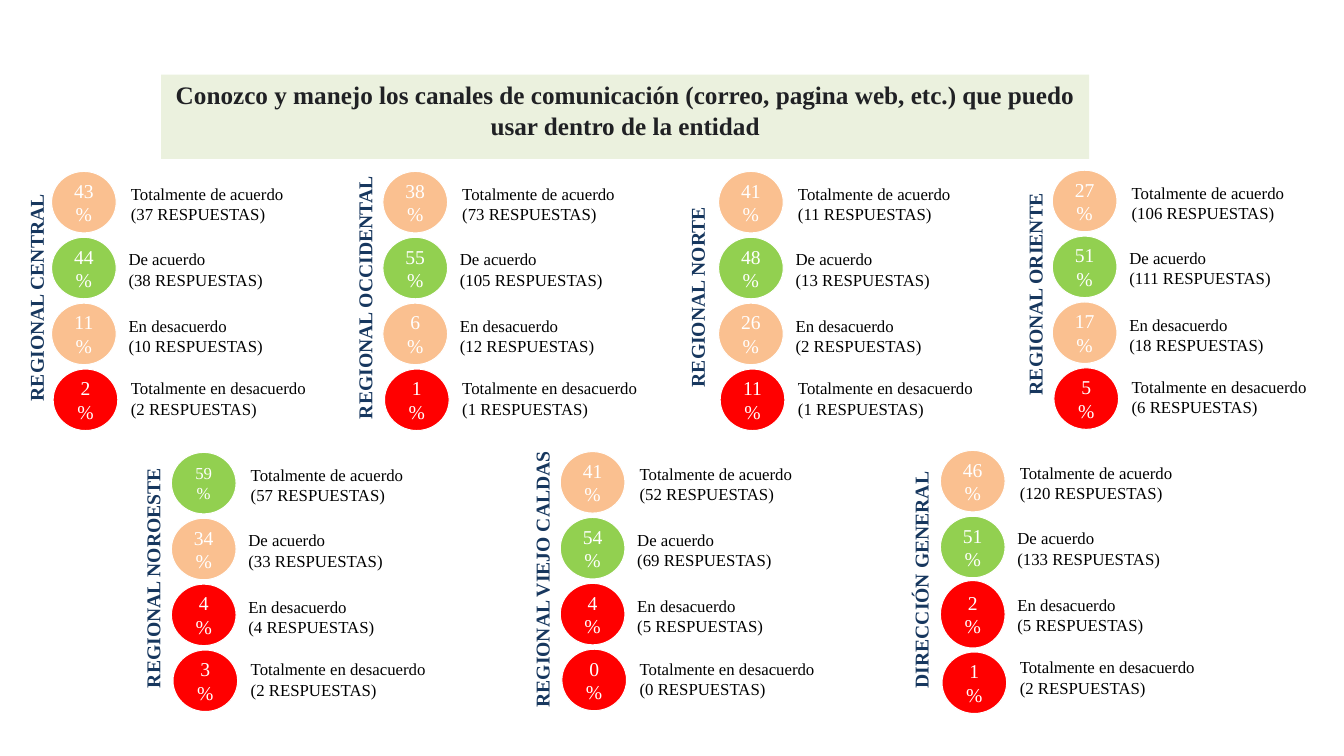
"""Build a slide of survey answers by region."""
from pptx import Presentation
from pptx import util as u
from pptx.dml.color import RGBColor
from pptx.enum import shapes, text

FONT = "Times New Roman"
WHITE = RGBColor(0xFF, 0xFF, 0xFF)
BLACK = RGBColor(0x00, 0x00, 0x00)
PEACH = RGBColor(0xFA, 0xC0, 0x90)
GREEN = RGBColor(0x92, 0xD0, 0x50)
RED = RGBColor(0xFF, 0x00, 0x00)
NAVY = RGBColor(0x17, 0x37, 0x5E)
PALE = RGBColor(0xEB, 0xF1, 0xDE)
INK = RGBColor(0x20, 0x21, 0x24)

TITLE = ("Conozco y manejo los canales de comunicación (correo, pagina web, etc.) "
         "que puedo usar dentro de la entidad")
STEP = 1.66
# Each scale row: wording, circle shift, label shift right and down, label width
SCALE = [
    ("Totalmente de acuerdo", 0, 1.74, 0.05, 6.02),
    ("De acuerdo", 0, 1.68, 1.7, 4.55),
    ("En desacuerdo", 0, 1.68, 3.38, 4.55),
    ("Totalmente en desacuerdo", 0.04, 1.74, 4.95, 6.15),
]
# Each region: name, name box (left, top, height), first circle (left, top), answers
REGIONS = [
    ("REGIONAL CENTRAL", (0.36, 2.21, 8.03), (1.3, 4.32),
     [(43, 37, PEACH), (44, 38, GREEN), (11, 10, PEACH), (2, 2, RED)]),
    ("REGIONAL OCCIDENTAL", (8.64, 2.64, 8.05), (9.65, 4.32),
     [(38, 73, PEACH), (55, 105, GREEN), (6, 12, PEACH), (1, 1, RED)]),
    ("REGIONAL NORTE", (17.02, 4.78, 5.11), (18.11, 4.32),
     [(41, 11, PEACH), (48, 13, GREEN), (26, 2, PEACH), (11, 1, RED)]),
    ("REGIONAL ORIENTE", (25.53, 2.06, 8.03), (26.52, 4.29),
     [(27, 106, PEACH), (51, 111, GREEN), (17, 18, PEACH), (5, 6, RED)]),
    ("REGIONAL NOROESTE", (3.3, 11.4, 6.07), (4.32, 11.4),
     [(59, 57, GREEN, {"size": 12}), (34, 33, PEACH), (4, 4, RED), (3, 2, RED)]),
    ("REGIONAL VIEJO CALDAS", (13.11, 9.93, 8.03), (14.12, 11.38),
     [(41, 52, PEACH), (54, 69, GREEN), (4, 5, RED), (0, 0, RED)]),
    ("DIRECCIÓN GENERAL", (22.66, 9.45, 8.03), (23.7, 11.35),
     [(46, 120, PEACH), (51, 133, GREEN), (2, 5, RED, {"drop": -0.04, "high": 1.7}),
      (1, 2, RED, {"drop": 0.1})]),
]


def write(shape, *lines, size=12, color=BLACK, bold=False, align=None,
          anchor=text.MSO_ANCHOR.TOP, pad=(0.26, 0.26), grow=True):
    """Put lines of text in a shape with one format."""
    frame = shape.text_frame
    frame.word_wrap = True
    mode = text.MSO_AUTO_SIZE
    frame.auto_size = mode.SHAPE_TO_FIT_TEXT if grow else mode.NONE
    frame.vertical_anchor = anchor
    frame.margin_left = frame.margin_right = u.Cm(pad[0])
    frame.margin_top = frame.margin_bottom = u.Cm(pad[1])
    frame.text = "\n".join(lines)
    for para in frame.paragraphs:
        para.alignment = align
        for run in para.runs:
            font = run.font
            font.name, font.size, font.bold = FONT, u.Pt(size), bold
            font.color.rgb = color


def add_title(slide):
    """Place and format the title."""
    head = slide.shapes.title
    head.left, head.top = u.Cm(4.06), u.Cm(1.88)
    head.width, head.height = u.Cm(23.39), u.Cm(1.8)
    head.fill.solid()
    head.fill.fore_color.rgb = PALE
    write(head, TITLE, size=18, color=INK, bold=True,
          align=text.PP_ALIGN.CENTER, pad=(0.25, 0.13))


def add_box(slide, left, top, width, height):
    """Add an empty text box."""
    return slide.shapes.add_textbox(u.Cm(left), u.Cm(top), u.Cm(width), u.Cm(height))


def add_name(slide, name, left, top, height):
    """Add a region name that reads upwards."""
    box = add_box(slide, left, top, 1.12, height)
    write(box, name, size=14, color=NAVY, bold=True, pad=(0.25, 0.13))
    box.element.txBody.bodyPr.set("vert", "vert270")


def add_disc(slide, share, color, left, top, size=14, drop=0, high=1.55):
    """Add a circle with a percentage."""
    disc = slide.shapes.add_shape(shapes.MSO_SHAPE.OVAL, u.Cm(left),
                                  u.Cm(top + drop), u.Cm(1.63), u.Cm(high))
    disc.shadow.inherit = False
    disc.fill.solid()
    disc.fill.fore_color.rgb = color
    disc.line.color.rgb = WHITE
    disc.line.width = u.Pt(0.75)
    write(disc, f"{share}%", size=size, color=WHITE, align=text.PP_ALIGN.CENTER,
          anchor=text.MSO_ANCHOR.MIDDLE, grow=False)


def add_region(slide, name, spot, start, answers):
    """Add a region name with its four answers."""
    left, top = start
    for row, (scale, answer) in enumerate(zip(SCALE, answers)):
        label, shift, right, down, width = scale
        share, count, color, *more = answer
        extra = more[0] if more else {}
        add_disc(slide, share, color, left + shift, top + row * STEP, **extra)
        box = add_box(slide, left + right, top + down, width, 1.55)
        write(box, label, f"({count} RESPUESTAS)")
    add_name(slide, name, *spot)


def main():
    """Build and save the slide."""
    deck = Presentation()
    deck.slide_width, deck.slide_height = u.Cm(33.87), u.Cm(19.05)
    slide = deck.slides.add_slide(deck.slide_layouts[5])
    add_title(slide)
    for region in REGIONS:
        add_region(slide, *region)
    deck.save("out.pptx")


if __name__ == "__main__":
    main()
